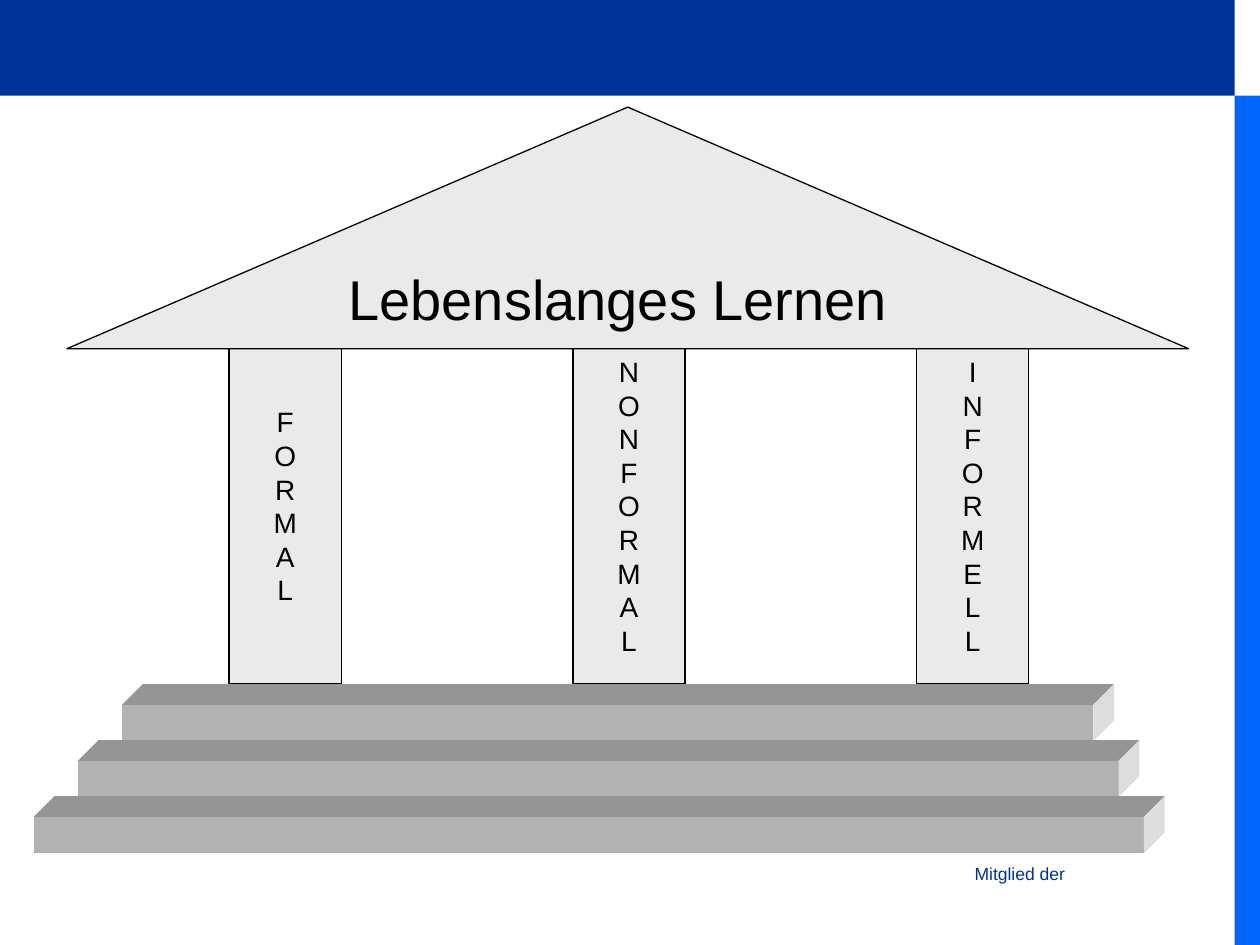
"""Build a slide showing lifelong learning as a temple with three pillars."""
from pptx import Presentation
from pptx.dml.color import RGBColor
from pptx.enum.shapes import MSO_SHAPE
from pptx.enum.text import MSO_ANCHOR, PP_ALIGN
from pptx.util import Cm, Pt

RECTANGLE = MSO_SHAPE.RECTANGLE
TRIANGLE = MSO_SHAPE.ISOSCELES_TRIANGLE
MIDDLE = MSO_ANCHOR.MIDDLE
CENTER, LEFT = PP_ALIGN.CENTER, PP_ALIGN.LEFT
STONE, BLACK, NAVY, BLUE = "EAEAEA", "000000", "003399", "0066FF"
FRONT, TOP, SIDE = "B2B2B2", "959595", "DDDDDD"


def paint(shape, fill, line=None):
    shape.shadow.inherit = False
    shape.fill.solid()
    shape.fill.fore_color.rgb = RGBColor.from_string(fill)
    if line:
        shape.line.color.rgb = RGBColor.from_string(line)
        shape.line.width = Pt(0.75)
    else:
        shape.line.fill.background()


def write(shape, text, size, color, alignment, wrap=False):
    frame = shape.text_frame
    frame.text = text
    frame.word_wrap = wrap
    frame.vertical_anchor = MIDDLE
    font_format = {"name": "Arial", "size": Pt(size), "bold": False}
    for paragraph in frame.paragraphs:
        paragraph.alignment = alignment
        for run in paragraph.runs:
            run.font.color.rgb = RGBColor.from_string(color)
            for attribute, value in font_format.items():
                setattr(run.font, attribute, value)


presentation = Presentation()
presentation.slide_width, presentation.slide_height = Cm(25.4), Cm(19.05)
slide = presentation.slides.add_slide(presentation.slide_layouts[5])
shapes = slide.shapes
title = shapes.title

bands = [(24.89, 1.93, 0.51, 17.12, BLUE), (0, 0, 24.89, 1.93, NAVY)]
for left, top, width, height, color in bands:
    band = shapes.add_shape(RECTANGLE, Cm(left), Cm(top), Cm(width), Cm(height))
    paint(band, color)

membership = shapes.add_textbox(Cm(19.4), Cm(17.27), Cm(2.74), Cm(0.69))
write(membership, "Mitglied der", 10, NAVY, LEFT, wrap=True)

for index, word in enumerate(["FORMAL", "NONFORMAL", "INFORMELL"]):
    pillar = shapes.add_shape(RECTANGLE, Cm(4.62 + 6.93 * index), Cm(6.6), Cm(2.26), Cm(7.19))
    paint(pillar, STONE, BLACK)
    write(pillar, "\n".join(word), 16, BLACK, CENTER)

depth = 0.42
for index in range(3):
    left, top = 2.46 - 0.89 * index, 14.21 + 1.13 * index
    right, bottom = left + 19.58 + 1.4 * index, top + 0.73
    faces = [
        (FRONT, [(left, top), (right, top), (right, bottom), (left, bottom)]),
        (TOP, [(left, top), (left + depth, top - depth), (right + depth, top - depth), (right, top)]),
        (SIDE, [(right, top), (right + depth, top - depth), (right + depth, bottom - depth), (right, bottom)]),
    ]
    for color, corners in faces:
        points = [(Cm(x), Cm(y)) for x, y in corners]
        builder = shapes.build_freeform(*points[0])
        builder.add_line_segments(points[1:], close=True)
        paint(builder.convert_to_shape(), color)

roof = shapes.add_shape(TRIANGLE, Cm(1.35), Cm(2.16), Cm(22.61), Cm(4.87))
paint(roof, STONE, BLACK)

title_place = {"left": Cm(6.4), "top": Cm(5.2), "width": Cm(12.12), "height": Cm(1.6)}
for attribute, value in title_place.items():
    setattr(title, attribute, value)
write(title, "Lebenslanges Lernen", 32, BLACK, CENTER)
shapes._spTree.append(title._element)

presentation.save("out.pptx")
